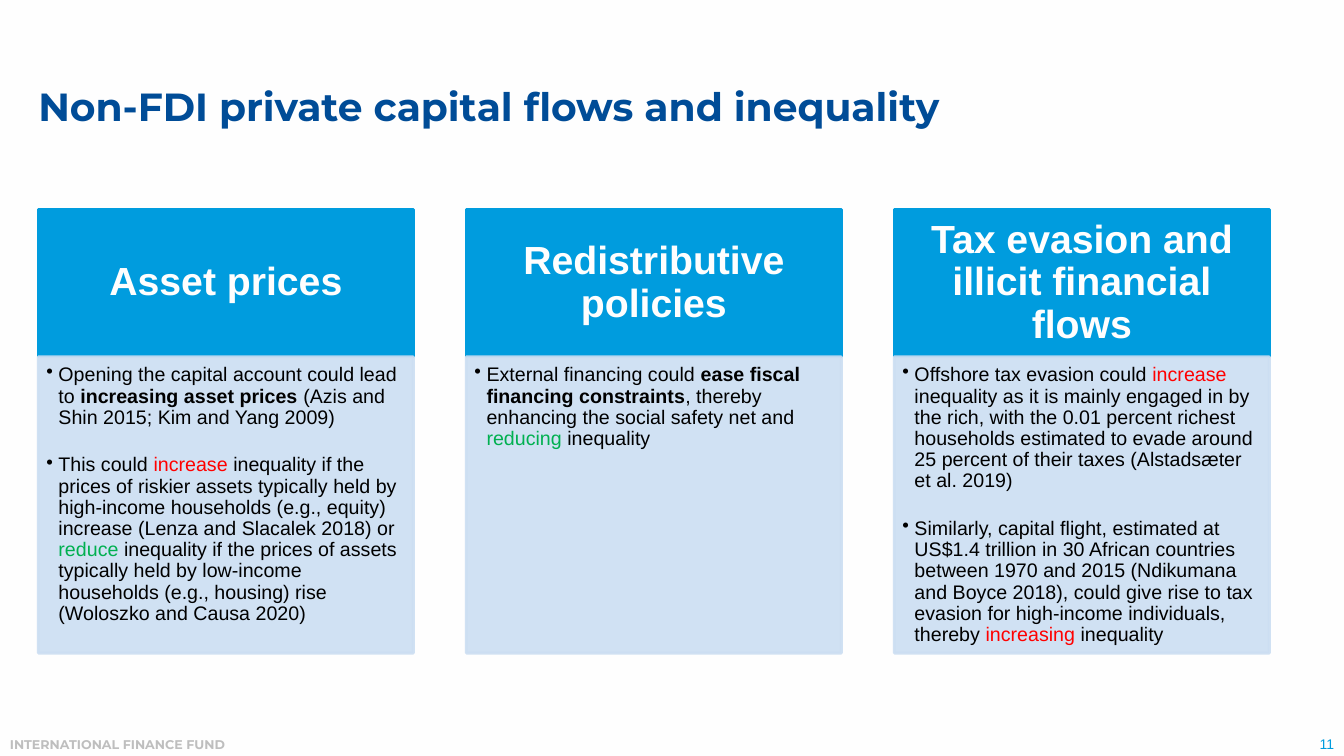
from collections import namedtuple
from dataclasses import dataclass

from lxml.etree import SubElement
from pptx import Presentation
from pptx.dml.color import RGBColor
from pptx.enum.shapes import MSO_SHAPE
from pptx.enum.text import MSO_ANCHOR, PP_ALIGN
from pptx.oxml.ns import qn
from pptx.util import Inches, Pt

Box = namedtuple("Box", "left top width height")


@dataclass(frozen=True)
class Theme:
    background: str = "FEFEFE"
    title: str = "004C97"
    accent: str = "009CDE"
    panel: str = "CCDEF2"
    text: str = "000000"
    rise: str = "FF0000"
    fall: str = "00B050"
    footer: str = "BEBEBE"
    heading_font: str = "Montserrat"
    body_font: str = "Arial"
    heading_size: int = 28
    body_size: int = 14
    number_size: int = 10
    footer_size: int = 9


THEME = Theme()
BOLD = {"bold": True}
RISE = {"color": THEME.rise}
FALL = {"color": THEME.fall}

# Each column is a heading and its bullets; each bullet is a list of (text, format).
COLUMNS = [
    ("Asset prices", [
        [("Opening the capital account could lead to ", {}),
         ("increasing asset prices ", BOLD),
         ("(Azis and Shin 2015; Kim and Yang 2009)", {})],
        [("This could ", {}),
         ("increase", RISE),
         (" inequality if the prices of riskier assets typically held by high-income "
          "households (e.g., equity) increase (Lenza and Slacalek 2018) or ", {}),
         ("reduce", FALL),
         (" inequality if the prices of assets typically held by low-income households "
          "(e.g., housing) rise (Woloszko and Causa 2020)", {})],
    ]),
    ("Redistributive policies", [
        [("External financing could ", {}),
         ("ease fiscal financing constraints", BOLD),
         (", thereby enhancing the social safety net and ", {}),
         ("reducing", FALL),
         (" inequality", {})],
    ]),
    ("Tax evasion and illicit financial flows", [
        [("Offshore tax evasion could ", {}),
         ("increase", RISE),
         (" inequality as it is mainly engaged in by the rich, with the 0.01 percent "
          "richest households estimated to evade around 25 percent of their taxes "
          "(Alstadsæter et al. 2019)", {})],
        [("Similarly, capital flight, estimated at US$1.4 trillion in 30 African countries "
          "between 1970 and 2015 (Ndikumana and Boyce 2018), could give rise to tax evasion "
          "for high-income individuals, thereby ", {}),
         ("increasing", RISE),
         (" inequality", {})],
    ]),
]


def add_text(para, text, color=THEME.text, size=THEME.body_size, font=THEME.body_font,
             bold=False):
    span = para.add_run()
    span.text = text
    span.font.name = font
    span.font.size = Pt(size)
    span.font.bold = bold
    span.font.color.rgb = RGBColor.from_string(color)


def set_frame(frame, anchor, margins):
    """Wrap the text and set its margins in inches: left, top, right, bottom."""
    frame.word_wrap = True
    frame.vertical_anchor = anchor
    (frame.margin_left, frame.margin_top,
     frame.margin_right, frame.margin_bottom) = map(Inches, margins)


def add_panel(page, box, color, opacity=100):
    panel = page.shapes.add_shape(MSO_SHAPE.RECTANGLE, *map(Inches, box))
    panel.shadow.inherit = False
    panel.line.width = Pt(2)
    for fill in (panel.fill, panel.line.fill):
        fill.solid()
        fill.fore_color.rgb = RGBColor.from_string(color)
    if opacity < 100:
        for tone in panel._element.spPr.iter(qn("a:srgbClr")):
            SubElement(tone, qn("a:alpha"), val=str(opacity * 1000))
    return panel


def add_bullet(para, indent=0.12):
    properties = para._p.get_or_add_pPr()
    properties.set("marL", str(Inches(indent)))
    properties.set("indent", str(-Inches(indent)))
    SubElement(properties, qn("a:buChar"), char="•")


def add_heading(page, box, heading):
    frame = add_panel(page, box, THEME.accent).text_frame
    set_frame(frame, MSO_ANCHOR.MIDDLE, (0.22, 0.12, 0.22, 0.12))
    para = frame.paragraphs[0]
    para.alignment = PP_ALIGN.CENTER
    para.line_spacing = 0.9
    add_text(para, heading, color=THEME.background, size=THEME.heading_size, bold=True)


def add_bullets(page, box, bullets):
    frame = add_panel(page, box, THEME.panel, opacity=90).text_frame
    set_frame(frame, MSO_ANCHOR.TOP, (0.08, 0.08, 0.11, 0.12))
    for index, spans in enumerate(bullets):
        para = frame.add_paragraph() if index else frame.paragraphs[0]
        para.alignment = PP_ALIGN.LEFT
        para.line_spacing = 0.9
        para.space_before = Pt(19 if index else 0)
        add_bullet(para)
        for text, style in spans:
            add_text(para, text, **style)


def add_columns(page, box, column_width=3.72, heading_height=1.46):
    step = (box.width - column_width) / (len(COLUMNS) - 1)
    for index, (heading, bullets) in enumerate(COLUMNS):
        left = box.left + index * step
        add_heading(page, Box(left, box.top, column_width, heading_height), heading)
        add_bullets(page, Box(left, box.top + heading_height, column_width,
                              box.height - heading_height), bullets)


def add_title(page, box, text):
    title = page.shapes.title
    title.left, title.top, title.width, title.height = map(Inches, box)
    set_frame(title.text_frame, MSO_ANCHOR.MIDDLE, (0, 0, 0, 0))
    para = title.text_frame.paragraphs[0]
    para.alignment = PP_ALIGN.LEFT
    para.line_spacing = 0.9
    add_text(para, text, color=THEME.title, size=THEME.heading_size,
             font=THEME.heading_font, bold=True)


def add_label(page, box, text, align, anchor, **style):
    frame = page.shapes.add_textbox(*map(Inches, box)).text_frame
    set_frame(frame, anchor, (0.1, 0.05, 0.1, 0.05))
    frame.paragraphs[0].alignment = align
    add_text(frame.paragraphs[0], text, **style)


def add_footer(page, box):
    number_width = 1.32
    add_label(page, Box(box.left, box.top + 0.02, 10, 0.25), "INTERNATIONAL FINANCE FUND",
              PP_ALIGN.LEFT, MSO_ANCHOR.TOP, color=THEME.footer, size=THEME.footer_size,
              font=THEME.heading_font, bold=True)
    add_label(page, Box(box.left + box.width - number_width, box.top, number_width, box.height),
              "11", PP_ALIGN.RIGHT, MSO_ANCHOR.BOTTOM, color=THEME.accent,
              size=THEME.number_size)


def main():
    deck = Presentation()
    deck.slide_width, deck.slide_height = Inches(13.33), Inches(7.5)
    page = deck.slides.add_slide(deck.slide_layouts.get_by_name("Title Only"))
    page.background.fill.solid()
    page.background.fill.fore_color.rgb = RGBColor.from_string(THEME.background)
    add_title(page, Box(0.38, 0.54, 11.96, 1.07),
              "Non-FDI private capital flows and inequality")
    add_columns(page, Box(0.38, 2.08, 12.21, 4.4))
    add_footer(page, Box(0, 7.24, 13.33, 0.27))
    deck.save("out.pptx")


if __name__ == "__main__":
    main()
